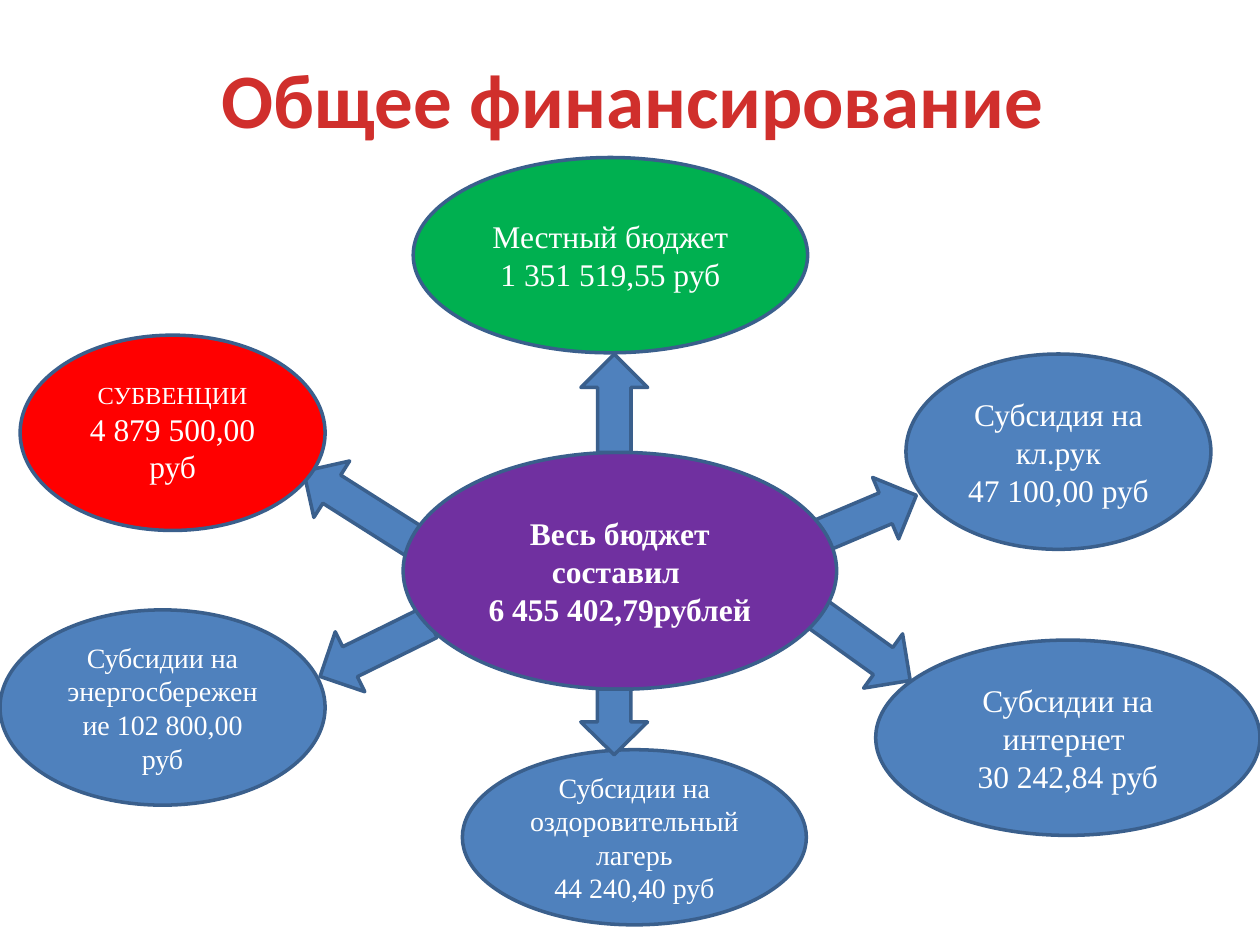
"""Builds the slide on total financing: a central budget with its six sources."""
import pptx
import pptx.dml.color
import pptx.enum.shapes
import pptx.enum.text
import pptx.util

Inches = pptx.util.Inches
Pt = pptx.util.Pt
SHAPE = pptx.enum.shapes.MSO_SHAPE
ALIGN = pptx.enum.text.PP_ALIGN
ANCHOR = pptx.enum.text.MSO_ANCHOR

BLUE = "4F81BD"


def rgb(value):
    return pptx.dml.color.RGBColor.from_string(value)


class Deck:
    title_font, body_font = "Calibri", "Times New Roman"
    title_color, text_color, outline = "D02F2C", "FFFFFF", "3A5F8C"
    arrow_width = 0.53

    def __init__(self):
        self.prs = pptx.Presentation()
        self.prs.slide_width, self.prs.slide_height = Inches(10), Inches(7.5)
        self.s = self.prs.slides.add_slide(self.prs.slide_layouts[5])

    def run(self, p, text, size, font, color, bold):
        r = p.add_run()
        r.text = text
        r.font.size, r.font.name, r.font.bold = Pt(size), font, bold
        r.font.color.rgb = rgb(color)

    def title(self, text, x, y, w, h):
        sp = self.s.shapes.title
        sp.left, sp.top, sp.width, sp.height = map(Inches, (x, y, w, h))
        tf = sp.text_frame
        tf.vertical_anchor = ANCHOR.MIDDLE
        p = tf.paragraphs[0]
        p.alignment = ALIGN.CENTER
        self.run(p, text, 44, self.title_font, self.title_color, True)

    def shape(self, kind, x, y, w, h, fill):
        sp = self.s.shapes.add_shape(kind, *map(Inches, (x, y, w, h)))
        sp.shadow.inherit = False
        sp.fill.solid()
        sp.fill.fore_color.rgb = rgb(fill)
        sp.line.color.rgb = rgb(self.outline)
        sp.line.width = Pt(2)
        return sp

    def arrow(self, x, y, length, rotation):
        sp = self.shape(SHAPE.DOWN_ARROW, x, y, self.arrow_width, length, BLUE)
        sp.rotation = rotation

    def ellipse(self, x, y, w, h, fill, lines, bold=False):
        sp = self.shape(SHAPE.OVAL, x, y, w, h, fill)
        tf = sp.text_frame
        tf.word_wrap = True
        tf.vertical_anchor = ANCHOR.MIDDLE
        for i, (text, size) in enumerate(lines):
            p = tf.add_paragraph() if i else tf.paragraphs[0]
            p.alignment = ALIGN.CENTER
            self.run(p, text, size, self.body_font, self.text_color, bold)


def main():
    deck = Deck()
    deck.title("Общее финансирование", 0.55, 0.23, 8.95, 1.09)

    for arrow in [
        (2.6, 3.49, 1.08, 122.4),
        (6.63, 3.68, 0.82, 247.1),
        (6.59, 4.68, 0.91, 305.7),
        (2.71, 4.67, 0.97, 63.8),
    ]:
        deck.arrow(*arrow)

    deck.ellipse(3.2, 3.59, 3.44, 1.88, "7030A0",
                 [("Весь бюджет составил ", 18), ("6 455 402,79рублей", 18)], bold=True)

    for source in [
        (0.16, 2.66, 2.42, 1.55, "FF0000",
         [("СУБВЕНЦИИ", 14), ("4 879 500,00 руб", 18)]),
        (3.28, 1.25, 3.13, 1.55, "00B050",
         [("Местный бюджет", 18), ("1 351 519,55 руб", 18)]),
        (0, 4.84, 2.58, 1.55, BLUE,
         [("Субсидии на энергосбережение 102 800,00 руб", 16)]),
        (7.19, 2.81, 2.42, 1.55, BLUE,
         [("Субсидия на кл.рук", 18), ("47 100,00 руб", 18)]),
        (6.95, 5.08, 3.05, 1.55, BLUE,
         [("Субсидии на интернет ", 18), ("30 242,84 руб", 18)]),
        (3.67, 5.95, 2.73, 1.39, BLUE,
         [("Субсидии на оздоровительный лагерь", 16), ("44 240,40 руб", 16)]),
    ]:
        deck.ellipse(*source)

    deck.arrow(4.61, 2.81, 0.78, 180)
    deck.arrow(4.61, 5.47, 0.52, 0)
    deck.prs.save("out.pptx")


if __name__ == "__main__":
    main()
